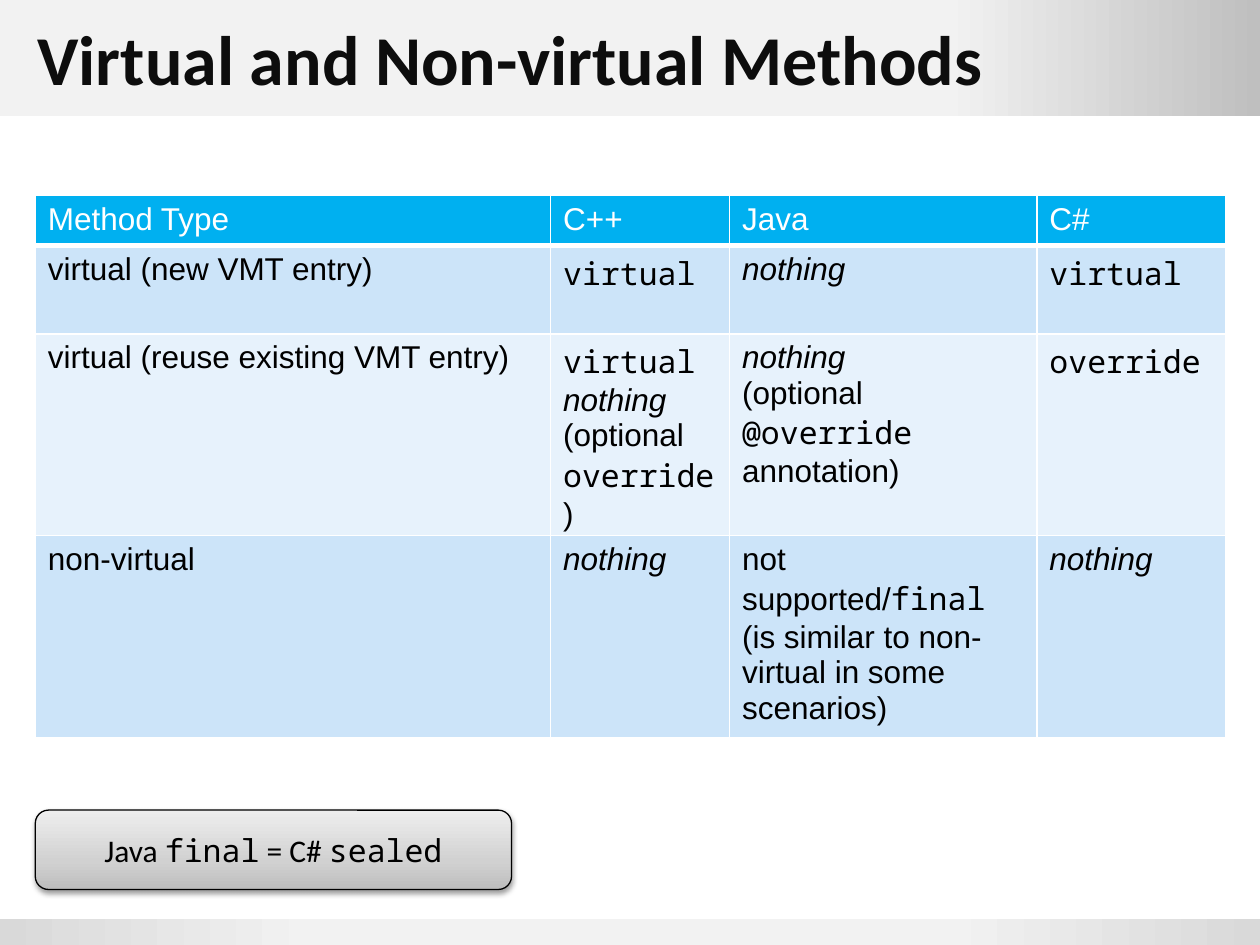
from dataclasses import dataclass

from lxml.etree import SubElement
from pptx import Presentation
from pptx.dml.color import RGBColor
from pptx.enum.shapes import MSO_SHAPE as Shape
from pptx.enum.text import MSO_ANCHOR as Anchor, PP_ALIGN as Align
from pptx.oxml.ns import qn
from pptx.util import Inches, Pt


@dataclass(frozen=True)
class Theme:
    """Colours, fonts and type sizes of the slide."""
    ink: str = "000000"
    title_ink: str = "0D0D0D"
    white: str = "FFFFFF"
    heading: str = "00B0F0"
    stripes: tuple = ("CCE4F9", "E7F2FC")
    header_band: tuple = ((75, "F2F2F2"), (100, "BFBFBF"))
    footer_band: tuple = ((0, "D9D9D9"), (25, "F2F2F2"), (75, "F2F2F2"), (100, "D9D9D9"))
    note: tuple = ((0, "BDBDBD"), (35, "D1D1D1"), (100, "EEEEEE"))
    title_font: str = "Calibri"
    body_font: str = "Arial"
    code_font: str = "Noto Sans Mono"
    title_size: int = 40
    body_size: int = 18


THEME = Theme()
COLUMNS, ROWS, CELL = 100, 75, 0.1

TITLE = "Virtual and Non-virtual Methods"
COLUMN_WIDTHS = (40.9, 14.2, 24.4, 15)
ROW_HEIGHTS = (3.7, 7, 13, 9.3)


def cells(count):
    """Return the length of a number of grid cells."""
    return Inches(count * CELL)


def code(text):
    """Return a run in the code font."""
    return text, {"font": THEME.code_font}


NOTHING = ("nothing", {"italic": True})
METHODS = [
    [["Method Type"], ["C++"], ["Java"], ["C#"]],
    [["virtual (new VMT entry)"], [code("virtual")], [NOTHING], [code("virtual")]],
    [["virtual (reuse existing VMT entry)"],
     [code("virtual"), "\n", NOTHING, "\n", "(optional ", code("override"), ")"],
     [NOTHING, "\v", "(optional ", code("@override"), " annotation)"],
     [code("override")]],
    [["non-virtual"], [NOTHING],
     ["not supported/", code("final"), "\v", "(is similar to non-virtual in some scenarios)"],
     [NOTHING]],
]
NOTE = ["Java ", code("final"), " = C# ", code("sealed")]


def write(frame, runs, font=THEME.body_font, size=THEME.body_size, color=THEME.ink,
          bold=False, italic=False, align=Align.LEFT):
    """Write runs; a newline starts a paragraph and a vertical tab breaks the line."""
    frame.word_wrap = True
    paragraph = frame.paragraphs[0]
    paragraph.alignment = align
    base = {"font": font, "italic": italic}
    for item in runs:
        if item == "\n":
            paragraph = frame.add_paragraph()
            paragraph.alignment = align
            continue
        if item == "\v":
            paragraph.add_line_break()
            continue
        text, own = item if isinstance(item, tuple) else (item, {})
        look = {**base, **own}
        run = paragraph.add_run()
        run.text = text
        run.font.name, run.font.italic = look["font"], look["italic"]
        run.font.size, run.font.bold = Pt(size), bold
        run.font.color.rgb = RGBColor.from_string(color)


def solid(parent, color):
    """Add a solid fill element and return its colour element."""
    return SubElement(SubElement(parent, qn("a:solidFill")), qn("a:srgbClr"), val=color)


def gradient_shape(slide, box, kind, stops, angle=0):
    """Add an unlined shape with a gradient of several stops."""
    shape = slide.shapes.add_shape(kind, *map(cells, box))
    shape.shadow.inherit = False
    shape.line.fill.background()
    shape.fill.gradient()
    gradient = shape.fill.gradient_stops and shape.element.spPr.find(qn("a:gradFill"))
    stop_list = gradient.find(qn("a:gsLst"))
    for stop in list(stop_list):
        stop_list.remove(stop)
    for position, color in stops:
        stop = SubElement(stop_list, qn("a:gs"), pos=str(position * 1000))
        SubElement(stop, qn("a:srgbClr"), val=color)
    gradient.find(qn("a:lin")).set("ang", str(angle * 60000))
    return shape


def add_header(slide, box):
    """Place the header band and the title on it."""
    left, top, width, height = box
    gradient_shape(slide, box, Shape.RECTANGLE, THEME.header_band)
    title_box = (left + 2, top, width - 4, height)
    title = slide.shapes.add_textbox(*map(cells, title_box)).text_frame
    title.vertical_anchor = Anchor.MIDDLE
    write(title, [TITLE], font=THEME.title_font, size=THEME.title_size,
          color=THEME.title_ink, bold=True)


def add_borders(cell, bottom=1):
    """Draw the white borders of a table cell."""
    properties = cell._tc.get_or_add_tcPr()
    for side, weight in (("L", 1), ("R", 1), ("T", 1), ("B", bottom)):
        border = SubElement(properties, qn(f"a:ln{side}"), w=str(Pt(weight)))
        solid(border, THEME.white)


def add_methods(slide, box):
    """Place the table of method types in four languages."""
    table = slide.shapes.add_table(len(METHODS), len(COLUMN_WIDTHS), *map(cells, box)).table
    for column, width in zip(table.columns, COLUMN_WIDTHS):
        column.width = cells(width)
    for row, height in zip(table.rows, ROW_HEIGHTS):
        row.height = cells(height)
    for r, entries in enumerate(METHODS):
        is_heading = r == 0
        fill = THEME.heading if is_heading else THEME.stripes[(r - 1) % 2]
        for c, runs in enumerate(entries):
            cell = table.cell(r, c)
            add_borders(cell, bottom=3 if is_heading else 1)
            cell.fill.solid()
            cell.fill.fore_color.rgb = RGBColor.from_string(fill)
            write(cell.text_frame, runs, color=THEME.white if is_heading else THEME.ink)


def add_note(slide, box):
    """Place the rounded note with its soft shadow."""
    note = gradient_shape(slide, box, Shape.ROUNDED_RECTANGLE, THEME.note, angle=270)
    note.line.color.rgb = RGBColor.from_string(THEME.ink)
    note.line.width = Pt(0.75)
    shadow = SubElement(note.element.spPr.find(qn("a:effectLst")), qn("a:outerShdw"),
                        blurRad="40000", dist="20000", dir="5400000", rotWithShape="0")
    SubElement(SubElement(shadow, qn("a:srgbClr"), val=THEME.ink), qn("a:alpha"), val="38000")
    note.text_frame.vertical_anchor = Anchor.MIDDLE
    write(note.text_frame, NOTE, font=THEME.title_font, align=Align.CENTER)


def add_footer(slide, box):
    """Place the footer band."""
    gradient_shape(slide, box, Shape.RECTANGLE, THEME.footer_band)


def main():
    """Build the slide and save it."""
    deck = Presentation()
    deck.slide_width, deck.slide_height = cells(COLUMNS), cells(ROWS)
    slide = deck.slides.add_slide(deck.slide_layouts[6])
    footer_height = 2.1
    add_header(slide, (0, 0, COLUMNS, 9.2))
    add_footer(slide, (0, ROWS - footer_height, COLUMNS, footer_height))
    add_methods(slide, (2.8, 15.5, sum(COLUMN_WIDTHS), sum(ROW_HEIGHTS)))
    add_note(slide, (2.8, 64.3, 37.8, 6.3))
    deck.save("out.pptx")


if __name__ == "__main__":
    main()
